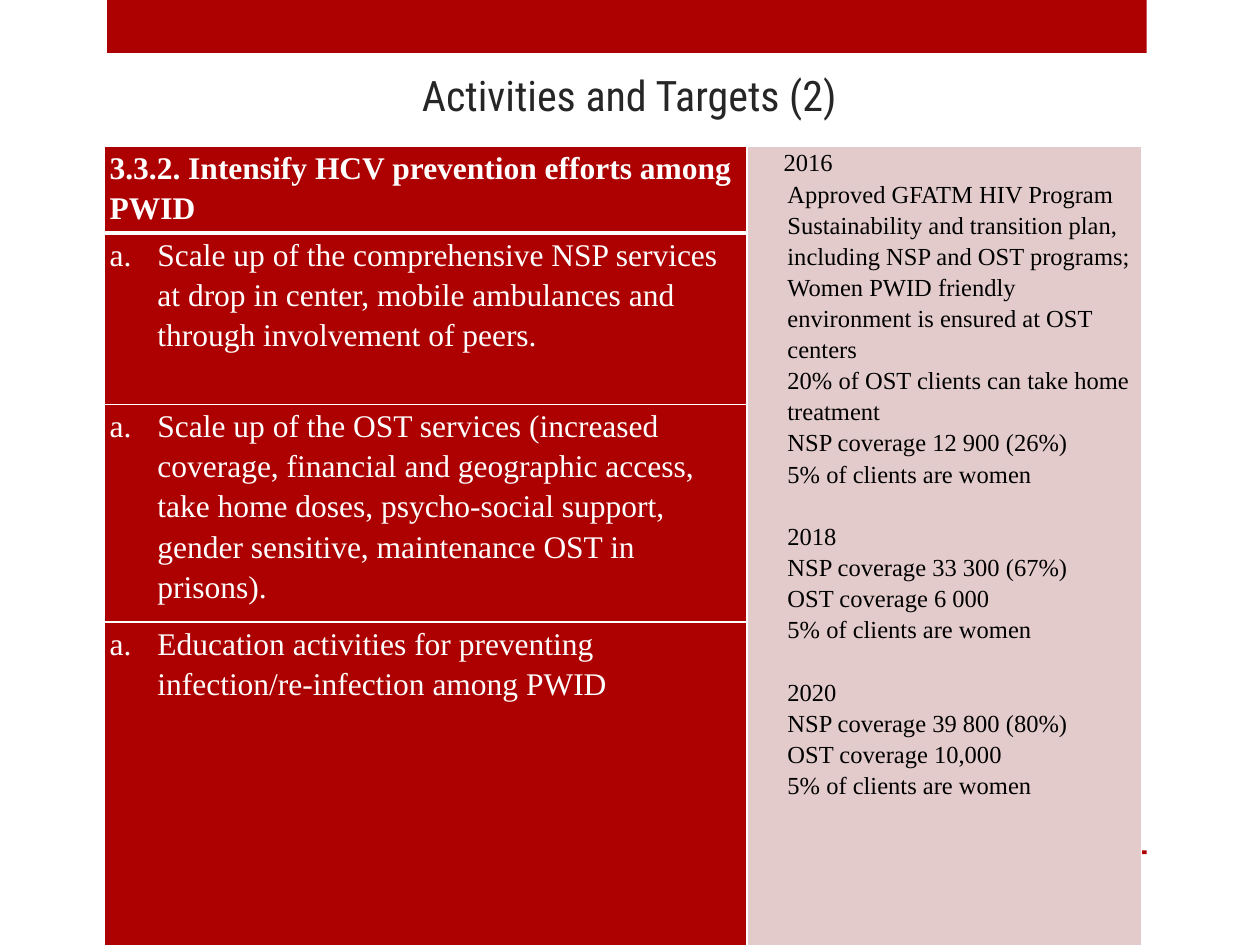
from copy import deepcopy

from lxml.etree import SubElement
from pptx import Presentation
from pptx.dml.color import RGBColor
from pptx.enum.shapes import MSO_SHAPE
from pptx.enum.text import MSO_ANCHOR, PP_ALIGN
from pptx.oxml.ns import qn
from pptx.util import Inches, Pt

RED = RGBColor(0xAD, 0x01, 0x01)
PINK = RGBColor(0xE3, 0xCB, 0xCB)
WHITE = RGBColor(0xFF, 0xFF, 0xFF)
BLACK = RGBColor(0x00, 0x00, 0x00)
DARK = RGBColor(0x26, 0x26, 0x26)


def write(p, text, size, color, font="Times New Roman", bold=False, spacing=1.15,
          align=None, left=0, indent=0, before=0, numbered=False):
    """Fill a paragraph; a newline in the text becomes a line break."""
    p.text = text
    p.alignment = align
    p.line_spacing = spacing
    p.space_before = Pt(before)
    for r in p.runs:
        r.font.size = Pt(size)
        r.font.name = font
        r.font.bold = bold
        r.font.color.rgb = color
    for br in p._p.findall(qn("a:br")):
        br.insert(0, deepcopy(p.runs[0]._r.rPr))
    pPr = p._p.get_or_add_pPr()
    pPr.set("marL", str(Inches(left)))
    pPr.set("indent", str(Inches(indent)))
    if numbered:
        SubElement(pPr, qn("a:buFont"), typeface="+mj-lt")
        SubElement(pPr, qn("a:buAutoNum"), type="alphaLcPeriod")


def set_border(cell, side, width):
    ln = SubElement(cell._tc.get_or_add_tcPr(), qn(f"a:ln{side}"), w=str(Pt(width)))
    fill = SubElement(ln, qn("a:solidFill"))
    SubElement(fill, qn("a:srgbClr"), val=str(WHITE))


prs = Presentation()
prs.slide_width = Inches(10)
prs.slide_height = Inches(7.5)
s = prs.slides.add_slide(prs.slide_layouts[6])

# Bars above and below the content
for top, height in [(0, 0.42), (6.75, 0.03)]:
    bar = s.shapes.add_shape(MSO_SHAPE.RECTANGLE, Inches(0.85), Inches(top),
                             Inches(8.25), Inches(height))
    bar.shadow.inherit = False
    bar.fill.solid()
    bar.fill.fore_color.rgb = RED
    bar.line.fill.background()

# Title
title = s.shapes.add_textbox(Inches(0.94), Inches(-0.01), Inches(8.11), Inches(1.01))
tf = title.text_frame
tf.word_wrap = True
tf.vertical_anchor = MSO_ANCHOR.BOTTOM
write(tf.paragraphs[0], "Activities and Targets (2)", 24, DARK,
      font="Roboto Condensed", spacing=1.0, align=PP_ALIGN.CENTER)

# Table: activities on the left, targets in one merged cell on the right
activities = [
    "3.3.2. Intensify HCV prevention efforts among PWID",
    "Scale up of the comprehensive NSP services at drop in center, mobile ambulances "
    "and through involvement of peers.",
    "Scale up of the OST services (increased coverage, financial and geographic access, "
    "take home doses, psycho-social support, gender sensitive, maintenance OST in prisons).",
    "Education activities for preventing infection/re-infection among PWID",
]
targets = [
    "2016",
    "Approved GFATM HIV Program Sustainability and transition plan, "
    "including NSP and OST programs;",
    "Women PWID friendly environment is ensured at OST centers",
    "20% of OST clients can take home treatment",
    "NSP coverage 12 900 (26%)\n5% of clients are women",
    "2018",
    "NSP coverage 33 300 (67%)",
    "OST coverage 6 000\n5% of clients are women",
    "2020",
    "NSP coverage 39 800 (80%)",
    "OST coverage 10,000\n5% of clients are women",
]
col_widths = [5.1, 3.13]
row_heights = [0.65, 1.36, 1.7, 2.63]

table = s.shapes.add_table(len(row_heights), len(col_widths), Inches(0.83), Inches(1.16),
                           Inches(sum(col_widths)), Inches(sum(row_heights))).table
for col, width in zip(table.columns, col_widths):
    col.width = Inches(width)
for row, height in zip(table.rows, row_heights):
    row.height = Inches(height)

for i, row in enumerate(table.rows):
    for j, cell in enumerate(row.cells):
        cell.margin_left = cell.margin_right = Inches(0.04)
        cell.margin_top = cell.margin_bottom = 0
        set_border(cell, "L", 1)
        set_border(cell, "R", 1)
        set_border(cell, "T", 3 if (i, j) == (1, 0) else 1)
        set_border(cell, "B", 3 if i == 0 else 1)
        cell.fill.solid()
        cell.fill.fore_color.rgb = PINK if j else RED

for i, text in enumerate(activities):
    p = table.cell(i, 0).text_frame.paragraphs[0]
    if i == 0:
        write(p, text, 18, WHITE, bold=True)
    else:
        write(p, text, 18, WHITE, left=0.38, indent=-0.38, numbered=True)

target_cell = table.cell(0, 1)
target_cell.merge(table.cell(len(row_heights) - 1, 1))
tf = target_cell.text_frame
for i, text in enumerate(targets):
    p = tf.add_paragraph() if i else tf.paragraphs[0]
    write(p, text, 14, BLACK, left=0.28 if i else 0.25,
          before=18 if text in ("2018", "2020") else 0)

prs.save("out.pptx")
